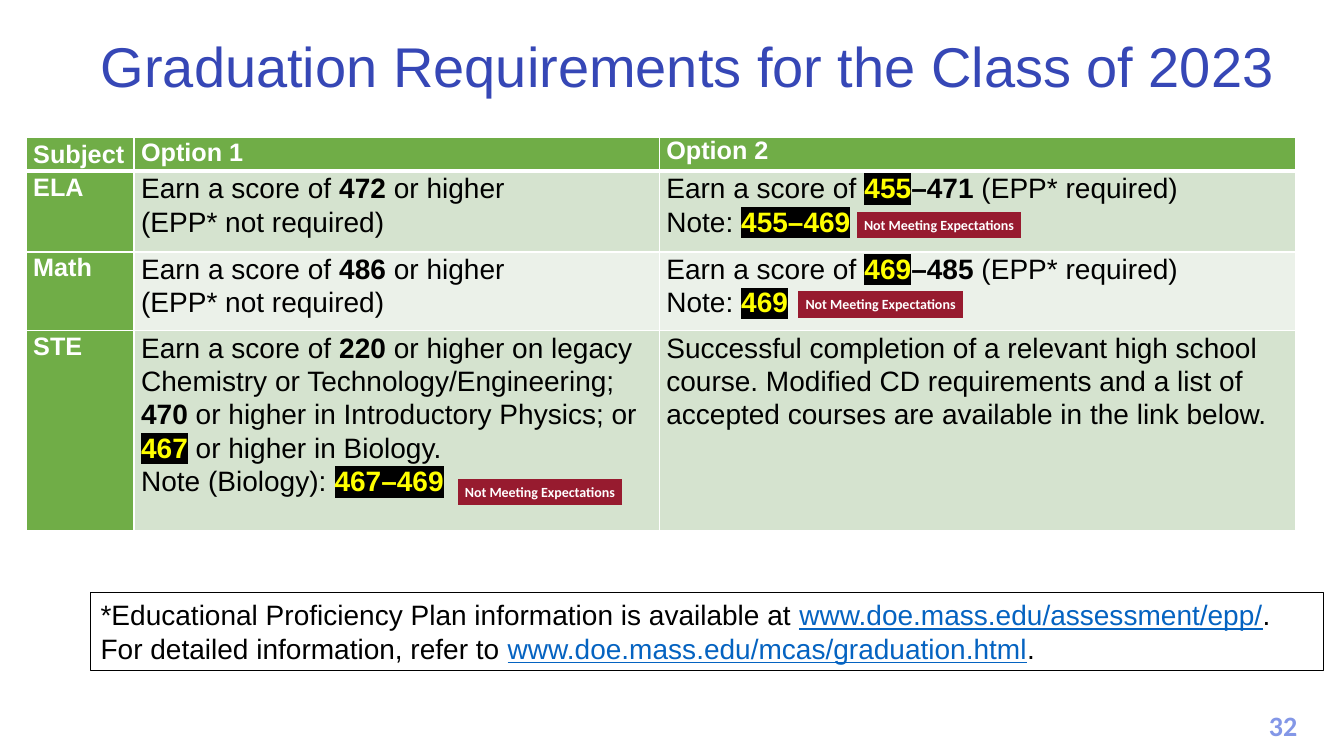
"""Builds the slide on graduation requirements for the Class of 2023."""
import pptx
import pptx.util
import pptx.dml.color
import pptx.enum.shapes
import pptx.enum.text
import lxml.etree
from dataclasses import dataclass

TITLE = "Graduation Requirements for the Class of 2023"
BADGE = "Not Meeting Expectations"
PAGE = "32"
NOT_REQUIRED = [("(EPP* not required)", "body")]


def earn(score):
    return [[("Earn a score of ", "body"), (score, "bold"), (" or higher", "body")], NOT_REQUIRED]


def earn_range(low, rest, note):
    return [
        [("Earn a score of ", "body"), (low, "mark"), (rest, "bold"), (" (EPP* required)", "body")],
        [("Note: ", "body"), (note, "mark")],
    ]


def head(text):
    return [[(text, "head")]]


ROWS = [
    [head("Subject"), head("Option 1"), head("Option 2")],
    [head("ELA"), earn("472"), earn_range("455", "–471", "455–469")],
    [head("Math"), earn("486"), earn_range("469", "–485", "469")],
    [
        head("STE"),
        [
            [("Earn a score of ", "body"), ("220", "bold"),
             (" or higher on legacy Chemistry or Technology/Engineering; ", "body"),
             ("470 ", "bold"), ("or higher in Introductory Physics; or", "body")],
            [("467", "mark"), (" or higher in Biology.", "body")],
            [("Note (Biology): ", "body"), ("467–469", "mark")],
        ],
        [[("Successful completion of a relevant high school course. Modified CD requirements "
           "and a list of accepted courses are available in the link below.", "body")]],
    ],
]
NOTE = [
    [("*Educational Proficiency Plan information is available at ", "body"),
     ("www.doe.mass.edu/assessment/epp/", "link"), (".", "body")],
    [("For detailed information, refer to ", "body"),
     ("www.doe.mass.edu/mcas/graduation.html", "link"), (".", "body")],
]

# Percentages of the slide's width and height
TITLE_BOX = (6.75, 4.27, 89.7, 9.87)
TABLE_AT = (1.95, 18.13)
COLS = (8.03, 39.08, 47.33)
HEIGHTS = (4.53, 10.67, 10.4, 26.4)
BADGES_AT = [(34.05, 63.33), (63.75, 28), (59.4, 38.53)]
BADGE_SIZE = (12.23, 3.47)
NOTE_BOX = (6.75, 78.4, 91.73, 10.27)
PAGE_BOX = (93.15, 93.07, 4.65, 5.87)


@dataclass
class Theme:
    white: str = "FFFFFF"
    black: str = "000000"
    green: str = "70AD47"
    bands: tuple = ("D5E3CF", "EBF1E9")
    badge: str = "971B2F"
    spacing: float = 1.07


THEME = Theme()
STYLES = {
    "title": ("Arial", 40, "3647B6", False),
    "head": ("Arial", 18, THEME.white, True),
    "body": ("Arial", 20, THEME.black, False),
    "bold": ("Arial", 20, THEME.black, True),
    "mark": ("Arial", 20, "FFFF00", True),
    "link": ("Arial", 20, "0563C1", False),
    "badge": ("Calibri", 10, THEME.white, True),
    "page": ("Calibri", 20, "8397E7", True),
}
TOP, MIDDLE = pptx.enum.text.MSO_ANCHOR.TOP, pptx.enum.text.MSO_ANCHOR.MIDDLE
CENTER, LEFT = pptx.enum.text.PP_ALIGN.CENTER, pptx.enum.text.PP_ALIGN.LEFT
NS = "{http://schemas.openxmlformats.org/drawingml/2006/main}"


def rgb(color):
    return pptx.dml.color.RGBColor.from_string(color)


def element(tag, color, **attributes):
    node = lxml.etree.Element(NS + tag, attributes)
    parent = node if tag == "highlight" else lxml.etree.SubElement(node, NS + "solidFill")
    lxml.etree.SubElement(parent, NS + "srgbClr", val=color)
    return node


def write(tf, paragraphs, align=LEFT, spacing=1.0):
    tf.word_wrap = True
    for i, runs in enumerate(paragraphs):
        p = tf.paragraphs[0] if i == 0 else tf.add_paragraph()
        p.alignment, p.line_spacing = align, spacing
        for text, style in runs:
            r = p.add_run()
            r.text = text
            font = r.font
            name, size, color, font.bold = STYLES[style]
            font.name, font.size = name, pptx.util.Pt(size)
            font.color.rgb = rgb(color)
            font.underline = style == "link"
            if style == "mark":
                rpr = font._element
                rpr.find(NS + "solidFill").addnext(element("highlight", THEME.black))
                rpr.insert(0, element("ln", THEME.black, w="9525"))


def border(cell, top, bottom):
    tcpr = cell._tc.get_or_add_tcPr()
    for i, (side, width) in enumerate(zip("LRTB", (1, 1, top, bottom))):
        tcpr.insert(i, element("ln" + side, THEME.white, w=str(pptx.util.Pt(width))))


def no_border(cell):
    tcpr = cell._tc.get_or_add_tcPr()
    for i, side in enumerate("LRTB"):
        line = lxml.etree.Element(NS + "ln" + side, w="0")
        lxml.etree.SubElement(line, NS + "noFill")
        tcpr.insert(i, line)


def build():
    prs = pptx.Presentation()
    prs.slide_width, prs.slide_height = pptx.util.Inches(13.33), pptx.util.Inches(7.5)
    s = prs.slides.add_slide(prs.slide_layouts[5])

    def across(share):
        return int(prs.slide_width * share / 100)

    def down(share):
        return int(prs.slide_height * share / 100)

    def box(left, top, width, height):
        return across(left), down(top), across(width), down(height)

    def add_table(at, cols, heights):
        area = box(*at, sum(cols), sum(heights))
        table = s.shapes.add_table(len(heights), len(cols), *area).table
        table.first_row = table.horz_banding = False
        for column, share in zip(table.columns, cols):
            column.width = across(share)
        for row, share in zip(table.rows, heights):
            row.height = down(share)
        return table

    def fill_cell(cell, paragraphs, color, inset, anchor, align=LEFT, spacing=THEME.spacing):
        cell.margin_left = cell.margin_right = pptx.util.Inches(inset)
        cell.margin_top = cell.margin_bottom = 0
        cell.vertical_anchor = anchor
        cell.fill.solid()
        cell.fill.fore_color.rgb = rgb(color)
        write(cell.text_frame, paragraphs, align, spacing)

    title = s.shapes.title
    title.left, title.top, title.width, title.height = box(*TITLE_BOX)
    title.text_frame.vertical_anchor = MIDDLE
    write(title.text_frame, [[(TITLE, "title")]], spacing=0.9)

    table = add_table(TABLE_AT, COLS, HEIGHTS)
    for y, row in enumerate(ROWS):
        for x, paragraphs in enumerate(row):
            cell = table.cell(y, x)
            color = THEME.green if x == 0 or y == 0 else THEME.bands[(y - 1) % 2]
            anchor = MIDDLE if x == y == 0 else TOP
            spacing = 1.0 if (y, x) == (0, 2) else THEME.spacing
            fill_cell(cell, paragraphs, color, 0.07, anchor, spacing=spacing)
            border(cell, 3 if y == 1 else 1, 3 if y == 0 else 1)

    for at in BADGES_AT:
        cell = add_table(at, BADGE_SIZE[:1], BADGE_SIZE[1:]).cell(0, 0)
        fill_cell(cell, [[(BADGE, "badge")]], THEME.badge, 0.06, MIDDLE, CENTER)
        no_border(cell)

    note = s.shapes.add_shape(pptx.enum.shapes.MSO_SHAPE.RECTANGLE, *box(*NOTE_BOX))
    note.shadow.inherit = False
    note.fill.background()
    note.line.color.rgb = rgb(THEME.black)
    note.line.width = pptx.util.Pt(0.75)
    note.text_frame.vertical_anchor = TOP
    write(note.text_frame, NOTE)

    page = s.shapes.add_textbox(*box(*PAGE_BOX))
    write(page.text_frame, [[(PAGE, "page")]], CENTER)
    prs.save("out.pptx")


if __name__ == "__main__":
    build()
